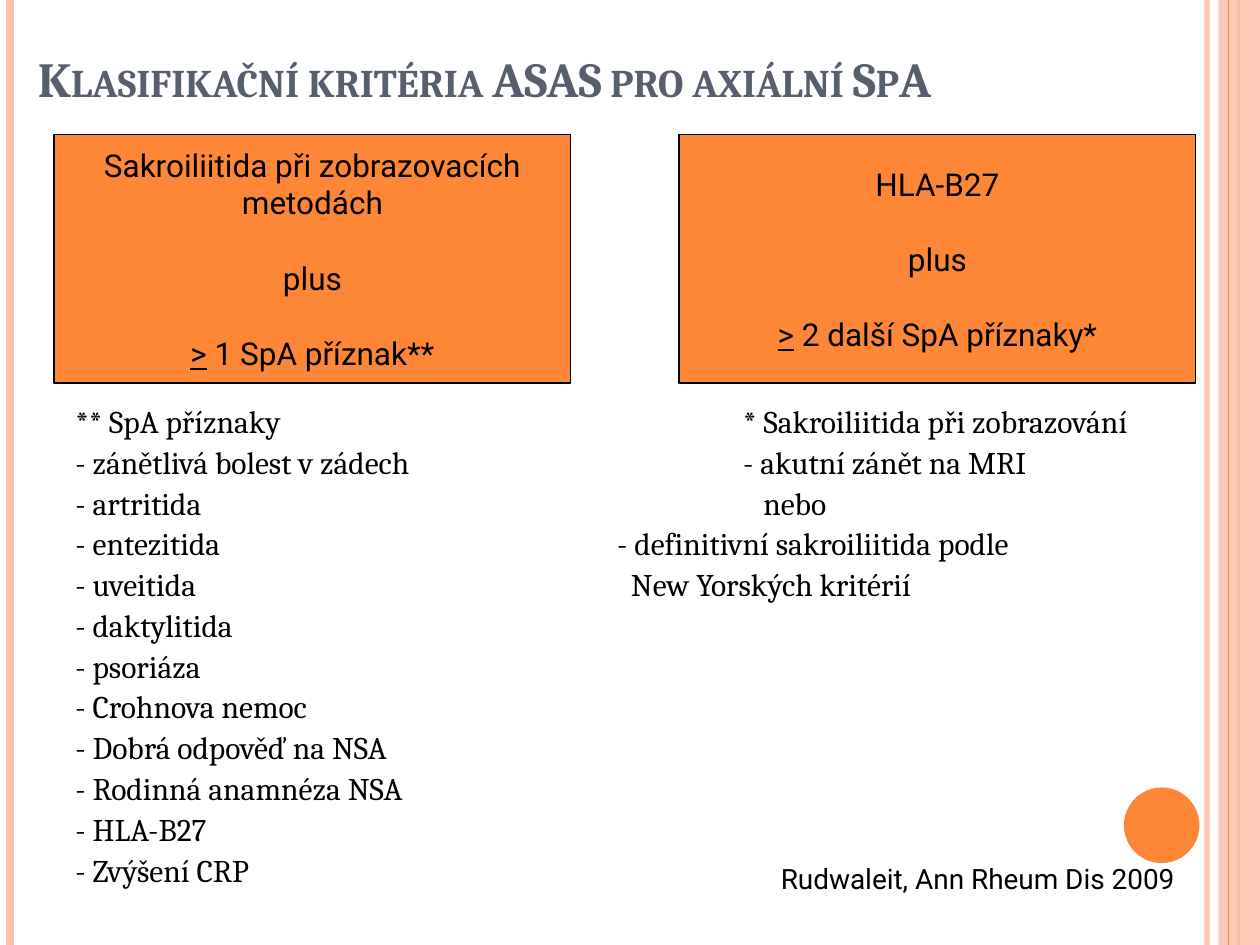
from lxml import etree
from pptx import Presentation
from pptx.dml.color import RGBColor
from pptx.enum.shapes import MSO_CONNECTOR, MSO_SHAPE
from pptx.enum.text import MSO_ANCHOR, PP_ALIGN
from pptx.oxml.ns import qn
from pptx.util import Inches, Pt

ORANGE, PEACH, BLACK, SLATE = "FE8637", "FEC3AE", "000000", "575F6D"
SERIF, SANS = "Cambria", "Roboto"
CENTER, LEFT = PP_ALIGN.CENTER, PP_ALIGN.LEFT
MIDDLE, BOTTOM, TOP = MSO_ANCHOR.MIDDLE, MSO_ANCHOR.BOTTOM, MSO_ANCHOR.TOP

TITLE = "Klasifikační kritéria ASAS pro axiální SpA"
CITATION = "Rudwaleit, Ann Rheum Dis 2009"
# x, colour, width in points, opacity in percent
STRIPES = [(9.58, PEACH, 3, 93), (0.08, PEACH, 4.5, 100),
           (9.83, ORANGE, 1.5, 100), (9.75, ORANGE, 0.75, 100)]
# left edge, then groups of lines separated by a gap
CRITERIA = [
    (0.43, [["Sakroiliitida při zobrazovacích", "metodách"], ["plus"],
            [">", " 1 SpA příznak**"]]),
    (5.39, [["HLA-B27"], ["plus"], [">", " 2 další SpA příznaky*"]]),
]
# left text, right text, tab stop of the right text
FEATURES = [
    ("** SpA příznaky", "* Sakroiliitida při zobrazování", 5.3),
    ("- zánětlivá bolest v zádech", "- akutní zánět na MRI", 5.3),
    ("- artritida", "nebo", 5.46),
    ("- entezitida", "- definitivní sakroiliitida podle", 4.3),
    ("- uveitida", "New Yorských kritérií", 4.41),
    ("- daktylitida", "", 0),
    ("- psoriáza", "", 0),
    ("- Crohnova nemoc", "", 0),
    ("- Dobrá odpověď na NSA", "", 0),
    ("- Rodinná anamnéza NSA", "", 0),
    ("- HLA-B27", "", 0),
    ("- Zvýšení CRP", "", 0),
]


def rgb(value):
    return RGBColor.from_string(value)


def set_opacity(fill, percent):
    """Add an alpha value to the solid colour found below an element."""
    color = fill.find(".//" + qn("a:srgbClr"))
    etree.SubElement(color, qn("a:alpha")).set("val", str(percent * 1000))


def add_run(paragraph, text, font=SANS, size=18, color=BLACK):
    run = paragraph.add_run()
    run.text = text
    run.font.name = font
    run.font.size = Pt(size)
    run.font.color.rgb = rgb(color)
    return run


def next_paragraph(frame, first, align=LEFT):
    paragraph = frame.paragraphs[0] if first else frame.add_paragraph()
    paragraph.alignment = align
    return paragraph


def add_stripe(slide, x, color, width, opacity):
    line = slide.shapes.add_connector(
        MSO_CONNECTOR.STRAIGHT, Inches(x), 0, Inches(x), Inches(7.5))
    line.line.color.rgb = rgb(color)
    line.line.width = Pt(width)
    properties = line._element.spPr
    if opacity < 100:
        set_opacity(properties, opacity)
    etree.SubElement(properties, qn("a:effectLst"))


def add_filled(slide, kind, box, color):
    shape = slide.shapes.add_shape(kind, *map(Inches, box))
    shape.shadow.inherit = False
    shape.fill.solid()
    shape.fill.fore_color.rgb = rgb(color)
    shape.line.fill.background()
    return shape


def add_text_box(slide, box, anchor, wrap):
    frame = slide.shapes.add_textbox(*map(Inches, box)).text_frame
    frame.word_wrap = wrap
    frame.vertical_anchor = anchor
    return frame


def add_criteria(slide, left, groups):
    shape = add_filled(slide, MSO_SHAPE.RECTANGLE, (left, 1.07, 4.1, 1.97), ORANGE)
    shape.line.color.rgb = rgb(BLACK)
    shape.line.width = Pt(0.75)
    frame = shape.text_frame
    frame.word_wrap = False
    frame.vertical_anchor = MIDDLE
    for index, group in enumerate(groups):
        if group[0] == ">":
            paragraph = next_paragraph(frame, False, CENTER)
            paragraph.space_before = Pt(21.5)
            add_run(paragraph, group[0]).font.underline = True
            add_run(paragraph, group[1])
            continue
        for number, text in enumerate(group):
            paragraph = next_paragraph(frame, index + number == 0, CENTER)
            if index and not number:
                paragraph.space_before = Pt(21.5)
            add_run(paragraph, text)


def add_tab_stop(paragraph, position):
    tabs = etree.SubElement(paragraph._p.get_or_add_pPr(), qn("a:tabLst"))
    tab = etree.SubElement(tabs, qn("a:tab"))
    tab.set("pos", str(Inches(position)))
    tab.set("algn", "l")


def add_features(slide):
    frame = add_text_box(slide, (0.5, 3.2, 9.3, 4.1), TOP, True)
    for index, (left, right, stop) in enumerate(FEATURES):
        paragraph = next_paragraph(frame, index == 0)
        paragraph.line_spacing = 0.8
        if index:
            paragraph.space_before = Pt(6)
        if right:
            add_tab_stop(paragraph, stop)
        add_run(paragraph, f"{left}\t{right}" if right else left, SERIF)


def add_title(slide):
    title = slide.shapes.title
    title.left, title.top, title.width, title.height = map(
        Inches, (0.2, 0.05, 9.5, 0.85))
    frame = title.text_frame
    frame.word_wrap = True
    frame.vertical_anchor = BOTTOM
    run = add_run(next_paragraph(frame, True), TITLE, SERIF, 28, SLATE)
    run.font.bold = True
    run.font._element.set("cap", "small")


def main():
    presentation = Presentation()
    presentation.slide_width, presentation.slide_height = Inches(10), Inches(7.5)
    slide = presentation.slides.add_slide(presentation.slide_layouts[5])
    for stripe in STRIPES[:3]:
        add_stripe(slide, *stripe)
    band = add_filled(slide, MSO_SHAPE.RECTANGLE, (9.67, 0, 0.33, 7.5), PEACH)
    set_opacity(band._element.spPr, 87)
    add_stripe(slide, *STRIPES[3])
    add_filled(slide, MSO_SHAPE.OVAL, (8.92, 6.25, 0.6, 0.6), ORANGE)
    add_title(slide)
    add_features(slide)
    for left, groups in CRITERIA:
        add_criteria(slide, left, groups)
    frame = add_text_box(slide, (5.87, 6.66, 3.78, 0.63), MIDDLE, False)
    add_run(next_paragraph(frame, True, CENTER), CITATION, size=16)
    presentation.save("out.pptx")


if __name__ == "__main__":
    main()
